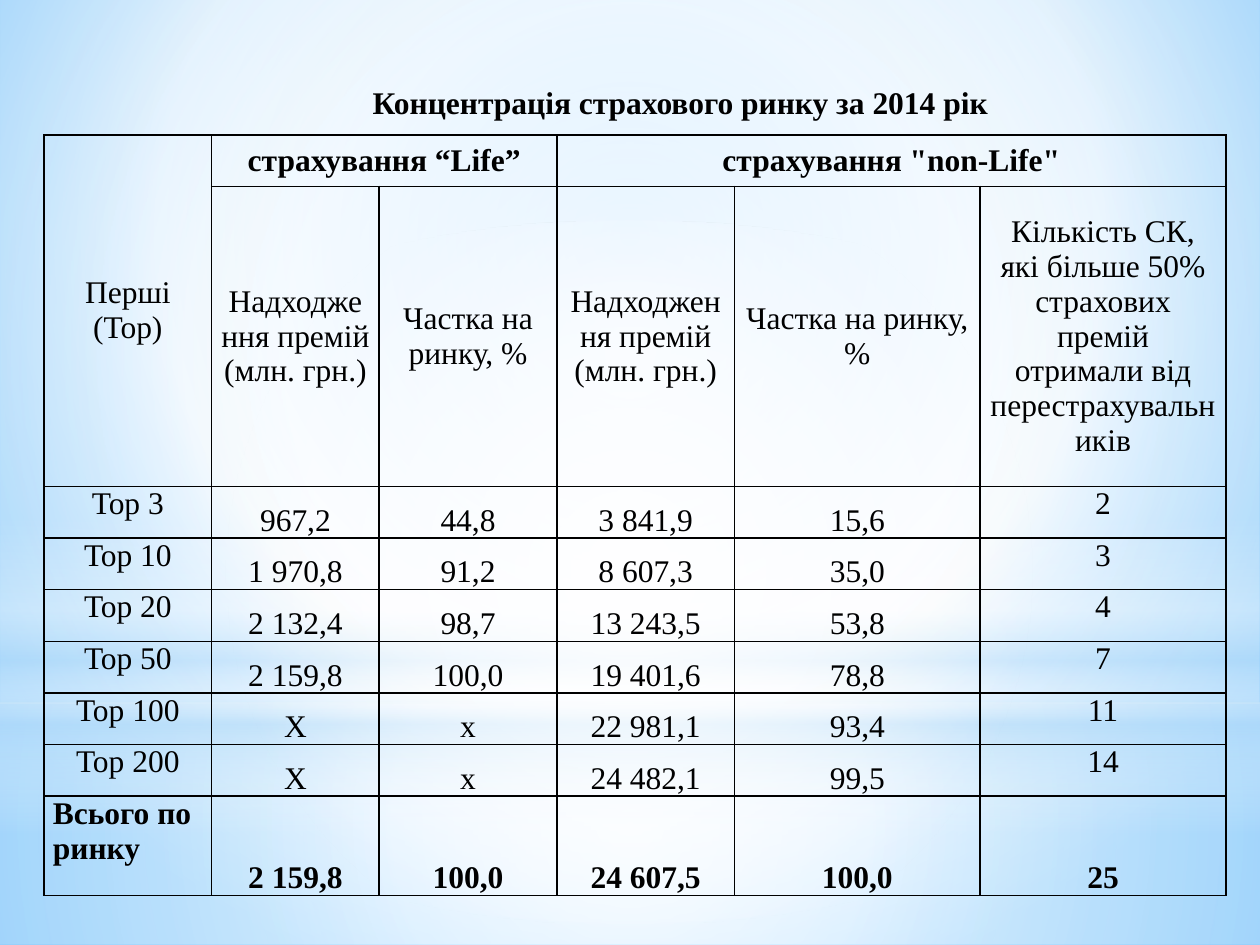
from lxml import etree
from pptx import Presentation
from pptx import util as u
from pptx.dml.color import RGBColor
from pptx.enum import shapes, text
from pptx.oxml import ns

FONT, SIZE = "Times New Roman", 18
COLORS = {"ink": "000000", "white": "FFFFFF", "mist": "B4DCFA",
          "sky": "9ED5FF", "azure": "5BB9FF"}

TITLE = "Концентрація страхового ринку за 2014 рік"
GROUPS = ["Перші (Тор)", "страхування “Life”", "", 'страхування "non-Life"', "", ""]
PREMIUMS, SHARE = "Надходження премій (млн. грн.)", "Частка на ринку, %"
HEADINGS = ["", PREMIUMS, SHARE, PREMIUMS, SHARE,
            "Кількість СК, які більше 50% страхових премій отримали від перестрахувальників"]
RANKS = [
    ["Тор 3", "967,2", "44,8", "3 841,9", "15,6", "2"],
    ["Тор 10", "1 970,8", "91,2", "8 607,3", "35,0", "3"],
    ["Тор 20", "2 132,4", "98,7", "13 243,5", "53,8", "4"],
    ["Тор 50", "2 159,8", "100,0", "19 401,6", "78,8", "7"],
    ["Тор 100", "Х", "x", "22 981,1", "93,4", "11"],
    ["Тор 200", "Х", "x", "24 482,1", "99,5", "14"],
]
TOTAL = ["Всього по ринку", "2 159,8", "100,0", "24 607,5", "100,0", "25"]
ROWS = [GROUPS, HEADINGS, *RANKS, TOTAL]
MERGES = [((0, 0), (1, 0)), ((0, 1), (0, 2)), ((0, 3), (0, 5))]
COLUMN_WIDTHS = [1.33, 1.33, 1.41, 1.41, 1.95, 1.95]
ROW_HEIGHTS = [0.41, 2.38] + [0.41] * len(RANKS) + [0.79]

# Gradient stops: position %, colour, opacity %
CENTRE = (50, 50, 50, 50)
BACKGROUND = [(0, "sky", 100), (60, "white", 100), (100, "azure", 100)]
BACKDROP = [  # preset, top, height, stops, focus rectangle (None = vertical)
    ("RECTANGLE", 5.58, 1.92, [(0, "white", 91), (37, "white", 76), (100, "mist", 79)], CENTRE),
    ("RECTANGLE", 0, 5.58, [(0, "white", 89), (48, "white", 62), (100, "mist", 79)], CENTRE),
    ("RECTANGLE", 4.12, 2.5, [(0, "white", 0), (29, "white", 30), (45, "mist", 40),
                              (55, "white", 26), (65, "mist", 60), (100, "white", 0)], None),
    ("OVAL", 1.75, 5.58, [(0, "white", 100), (56, "white", 0)], CENTRE),
]


def add_element(parent, tag, **attributes):
    values = {name: str(value) for name, value in attributes.items()}
    return etree.SubElement(parent, ns.qn(tag), values)


def set_gradient(fill, parent, stops, focus):
    fill.solid()
    gradient = etree.Element(ns.qn("a:gradFill"), rotWithShape="1")
    stop_list = add_element(gradient, "a:gsLst")
    for position, color, opacity in stops:
        stop = add_element(stop_list, "a:gs", pos=position * 1000)
        color_element = add_element(stop, "a:srgbClr", val=COLORS[color])
        if opacity < 100:
            add_element(color_element, "a:alpha", val=opacity * 1000)
    if focus:
        circle = add_element(gradient, "a:path", path="circle")
        sides = {side: share * 1000 for side, share in zip("ltrb", focus)}
        add_element(circle, "a:fillToRect", **sides)
    else:
        add_element(gradient, "a:lin", ang=90 * 60000, scaled=0)
    parent.replace(parent.find(ns.qn("a:solidFill")), gradient)


def write(frame, words, align, bold):
    paragraph = frame.paragraphs[0]
    paragraph.alignment = align
    run = paragraph.add_run()
    run.text = words
    run.font.name, run.font.size, run.font.bold = FONT, u.Pt(SIZE), bold
    run.font.color.rgb = RGBColor.from_string(COLORS["ink"])
    return paragraph


def add_borders(cell):
    properties = cell._tc.get_or_add_tcPr()
    for index, side in enumerate("LRTB"):
        line = add_element(properties, f"a:ln{side}", w=u.Pt(1))
        add_element(add_element(line, "a:solidFill"), "a:srgbClr", val=COLORS["ink"])
        properties.insert(index, line)


def cell_anchor(row, column):
    if row < 2:
        return text.MSO_ANCHOR.MIDDLE
    is_total = row == len(ROWS) - 1
    if column == 0 or (column == 5 and not is_total):
        return text.MSO_ANCHOR.TOP
    return text.MSO_ANCHOR.BOTTOM


def add_backdrop(slide):
    background_fill = slide.background.fill
    background_fill.solid()
    background = slide._element.find(".//" + ns.qn("p:bgPr"))
    set_gradient(background_fill, background, BACKGROUND, (20, 10, 20, 60))
    for preset, top, height, stops, focus in BACKDROP:
        shape = slide.shapes.add_shape(getattr(shapes.MSO_SHAPE, preset), 0, u.Inches(top),
                                       u.Inches(10), u.Inches(height))
        shape.shadow.inherit = False
        shape.line.fill.background()
        set_gradient(shape.fill, shape._element.spPr, stops, focus)


def add_market_table(slide):
    table = slide.shapes.add_table(
        len(ROWS), len(COLUMN_WIDTHS), u.Inches(0.35), u.Inches(1.07),
        u.Inches(sum(COLUMN_WIDTHS)), u.Inches(sum(ROW_HEIGHTS))).table
    table.first_row = table.horz_banding = False
    for column, width in zip(table.columns, COLUMN_WIDTHS):
        column.width = u.Inches(width)
    for row, height in zip(table.rows, ROW_HEIGHTS):
        row.height = u.Inches(height)
    for first, last in MERGES:
        table.cell(*first).merge(table.cell(*last))

    last_row = len(ROWS) - 1
    for row, values in enumerate(ROWS):
        for column, words in enumerate(values):
            cell = table.cell(row, column)
            cell.fill.background()
            add_borders(cell)
            cell.margin_left = cell.margin_right = u.Inches(0.07)
            cell.margin_top = cell.margin_bottom = 0
            cell.vertical_anchor = cell_anchor(row, column)
            if words:
                is_label = (row, column) == (last_row, 0)
                align = text.PP_ALIGN.LEFT if is_label else text.PP_ALIGN.CENTER
                write(cell.text_frame, words, align,
                      row == last_row or (row == 0 and column > 0))


def place_title(slide):
    title = slide.shapes.title
    title.left, title.top = u.Inches(0.51), u.Inches(0.59)
    title.width, title.height = u.Inches(9.29), u.Inches(0.44)
    title.text_frame.vertical_anchor = text.MSO_ANCHOR.MIDDLE
    title.text_frame.word_wrap = True
    paragraph = write(title.text_frame, TITLE, text.PP_ALIGN.CENTER, True)
    paragraph._p.get_or_add_pPr().set("indent", str(u.Inches(0.49)))
    # Bring the title in front of the backdrop
    slide.shapes._spTree.append(title._element)


def main():
    presentation = Presentation()
    presentation.slide_width, presentation.slide_height = u.Inches(10), u.Inches(7.5)
    slide = presentation.slides.add_slide(presentation.slide_layouts[5])
    add_backdrop(slide)
    add_market_table(slide)
    place_title(slide)
    presentation.save("out.pptx")


if __name__ == "__main__":
    main()
